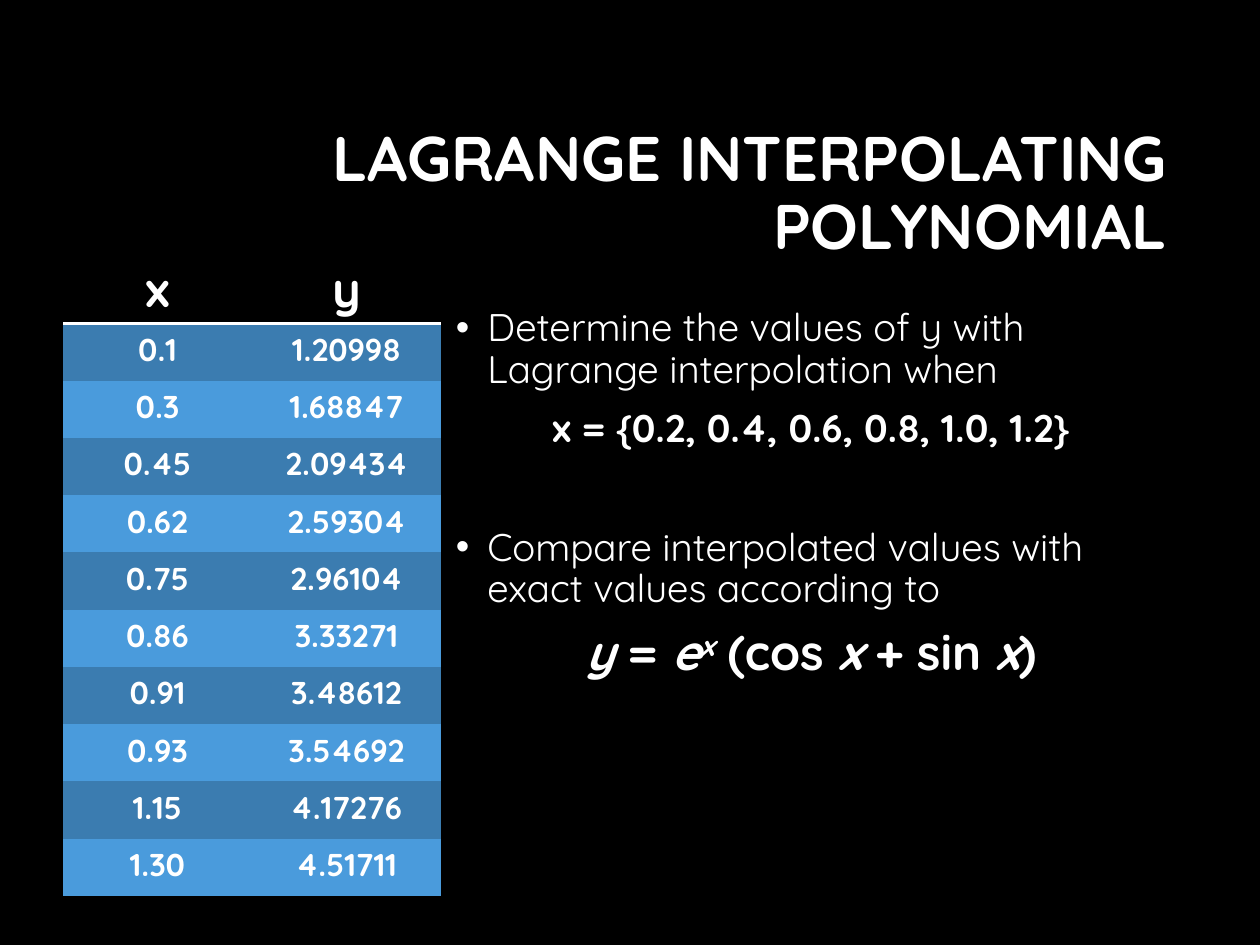
from lxml import etree
from pptx import Presentation
from pptx.dml.color import RGBColor
from pptx.enum.text import MSO_ANCHOR, PP_ALIGN
from pptx.oxml import parse_xml
from pptx.oxml.ns import nsdecls, qn
from pptx.util import Inches, Pt

CENTER, RIGHT, LEFT = PP_ALIGN.CENTER, PP_ALIGN.RIGHT, PP_ALIGN.LEFT
MIDDLE = MSO_ANCHOR.MIDDLE
TITLE_ONLY = 5
PLAIN_TABLE_STYLE = "{2D5ABB26-0587-4C30-8999-92F81FD0307C}"

SAMPLES = [
    ("x", "y"),
    ("0.1", "1.20998"), ("0.3", "1.68847"), ("0.45", "2.09434"),
    ("0.62", "2.59304"), ("0.75", "2.96104"), ("0.86", "3.33271"),
    ("0.91", "3.48612"), ("0.93", "3.54692"), ("1.15", "4.17276"),
    ("1.30", "4.51711"),
]

BOLD, ITALIC = {"bold": True}, {"bold": True, "italic": True}
FORMULA = [
    ("y", ITALIC), (" = ", BOLD), ("e", ITALIC),
    ("x", {**ITALIC, "baseline": 30}), (" (cos ", BOLD), ("x", ITALIC),
    (" + sin ", BOLD), ("x", ITALIC), (")", BOLD),
]
# Each task: runs, size, bulleted, space before
TASKS = [
    ([("Determine the values of y with Lagrange interpolation when", {})],
     22, True, 0),
    ([("x = {0.2, 0.4, 0.6, 0.8, 1.0, 1.2}", BOLD)], 22, False, 10),
    ([("Compare interpolated values with exact values according to", {})],
     22, True, 44),
    (FORMULA, 28, False, 10),
]


def color(hex_value):
    return RGBColor.from_string(hex_value)


class Deck:
    FONT, TEXT, BACKGROUND = "Quicksand", "FFFFFF", "000000"
    BANDS = ("4A9BDC", "3B7CB0")

    def __init__(self, width, height):
        self.presentation = Presentation()
        self.presentation.slide_width = Inches(width)
        self.presentation.slide_height = Inches(height)

    def add_slide(self):
        layout = self.presentation.slide_layouts[TITLE_ONLY]
        self.slide = self.presentation.slides.add_slide(layout)
        self.fill(self.slide.background, self.BACKGROUND)

    def fill(self, target, hex_value):
        target.fill.solid()
        target.fill.fore_color.rgb = color(hex_value)

    def add_text(self, paragraph, runs, size, **layout):
        for name, value in layout.items():
            setattr(paragraph, name, value)
        for text, style in runs:
            run = paragraph.add_run()
            run.text = text
            values = {"name": self.FONT, "size": Pt(size), "bold": False,
                      "italic": False, **style}
            baseline = values.pop("baseline", 0)
            for name, value in values.items():
                setattr(run.font, name, value)
            run.font.color.rgb = color(self.TEXT)
            if baseline:
                run._r.get_or_add_rPr().set("baseline", str(baseline * 1000))

    def title(self, text, left, top, width, height):
        heading = self.slide.shapes.title
        box = {"left": left, "top": top, "width": width, "height": height}
        for name, value in box.items():
            setattr(heading, name, Inches(value))
        heading.text_frame.vertical_anchor = MIDDLE
        self.add_text(heading.text_frame.paragraphs[0], [(text, BOLD)], 36,
                      alignment=RIGHT, line_spacing=0.9)

    def bullet(self, paragraph):
        properties = paragraph._p.get_or_add_pPr()
        properties.set("marL", str(Inches(0.25)))
        properties.set("indent", str(Inches(-0.25)))
        etree.SubElement(properties, qn("a:buFont"), typeface="Arial")
        etree.SubElement(properties, qn("a:buChar"), char="•")

    def task_list(self, tasks, *box):
        frame = self.slide.shapes.add_textbox(*map(Inches, box)).text_frame
        frame.word_wrap = True
        for index, (runs, size, bulleted, before) in enumerate(tasks):
            paragraph = frame.add_paragraph() if index else frame.paragraphs[0]
            if bulleted:
                self.bullet(paragraph)
            self.add_text(paragraph, runs, size, line_spacing=0.9,
                          space_before=Pt(before),
                          alignment=LEFT if bulleted else CENTER)

    def underline(self, cell):
        cell._tc.get_or_add_tcPr().insert(0, parse_xml(
            f'<a:lnB {nsdecls("a")} w="{Pt(2)}"><a:solidFill>'
            f'<a:srgbClr val="{self.TEXT}"/></a:solidFill></a:lnB>'))

    def table(self, rows, *box):
        frame = self.slide.shapes.add_table(len(rows), len(rows[0]),
                                            *map(Inches, box))
        table = frame.table
        table._tbl.tblPr.find(qn("a:tableStyleId")).text = PLAIN_TABLE_STYLE
        for r, values in enumerate(rows):
            for c, value in enumerate(values):
                cell = table.cell(r, c)
                self.fill(cell, self.BANDS[r % 2] if r else self.BACKGROUND)
                if r == 0:
                    self.underline(cell)
                self.add_text(cell.text_frame.paragraphs[0], [(value, BOLD)],
                              18 if r else 28, alignment=CENTER)


def main():
    deck = Deck(10, 7.5)
    deck.add_slide()
    # Heading
    deck.title("LAGRANGE INTERPOLATING POLYNOMIAL", 2.38, 0.84, 6.98, 1.41)
    # Tasks beside the samples
    deck.task_list(TASKS, 3.52, 2.4, 5.83, 4.45)
    # Sample points; the header row grows to fit its larger text
    deck.table(SAMPLES, 0.5, 2, 3, 5)
    deck.presentation.save("out.pptx")


if __name__ == "__main__":
    main()
